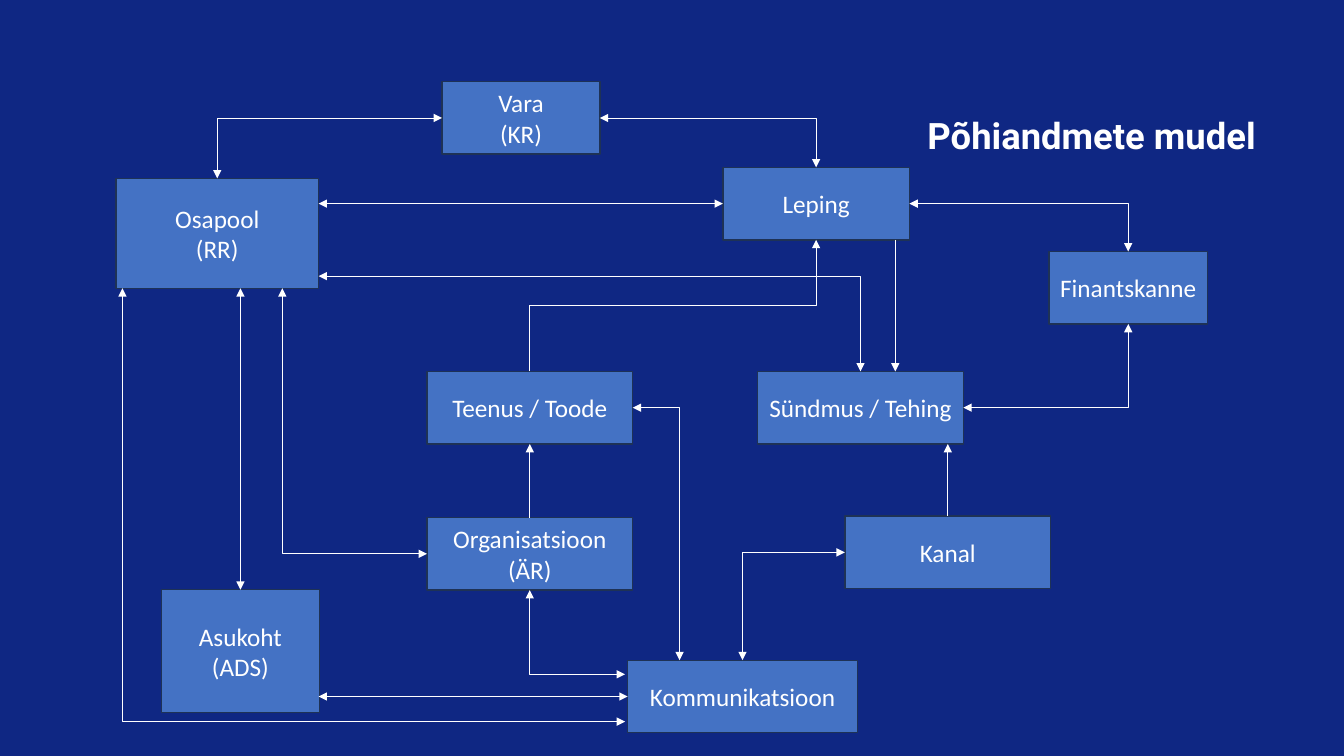
from lxml import etree
from pptx import Presentation, util as u
from pptx.dml.color import RGBColor
from pptx.enum import shapes, text
from pptx.oxml.ns import qn

COLUMNS, ROWS = 1333, 750
NAVY, BLUE, EDGE, WHITE = "0F2783", "4472C4", "1E3256", "FFFFFF"
TOP, LEFT, BOTTOM, RIGHT = range(4)

ENTITIES = {
    "Osapool": (115, 177, 201, 109, "(RR)"),
    "Vara": (438.5, 81, 156.5, 72, "(KR)"),
    "Leping": (717, 166, 185, 72, None),
    "Teenus / Toode": (423.5, 368.5, 204, 72, None),
    "Sündmus / Tehing": (751.5, 368.5, 204, 72, None),
    "Finantskanne": (1040.5, 249.5, 157, 72, None),
    "Organisatsioon": (423.5, 513.5, 204, 72, "(ÄR)"),
    "Asukoht": (160, 585, 157, 122, "(ADS)"),
    "Kommunikatsioon": (622.5, 655, 228, 72, None),
    "Kanal": (838, 512, 204, 72, None),
}

STRAIGHT_LINKS = [
    ((316, 202), ("Leping", LEFT), True),
    (("Asukoht", TOP), (238.5, 286), True),
    (("Kommunikatsioon", LEFT), (316, 691), True),
    (("Kanal", TOP), (940, 440.5), False),
    (("Organisatsioon", TOP), ("Teenus / Toode", BOTTOM), False),
    ((888, 238), (888, 368.5), False),
]

CORNER_LINKS = [
    (("Vara", LEFT), ("Osapool", TOP)),
    (("Vara", RIGHT), ("Leping", TOP)),
    ((316, 274), ("Sündmus / Tehing", TOP)),
    (("Leping", RIGHT), ("Finantskanne", TOP)),
    (("Sündmus / Tehing", RIGHT), ("Finantskanne", BOTTOM)),
    (("Kanal", LEFT), ("Kommunikatsioon", TOP)),
    (("Organisatsioon", LEFT), (280, 286)),
    (("Teenus / Toode", RIGHT), (674, 655)),
    ((620, 669), ("Organisatsioon", BOTTOM)),
    ((620, 716), (121.5, 286)),
]


def color(value):
    return RGBColor.from_string(value)


def place(area, column, row):
    left, top, width, height = area
    return round(left + width * column / COLUMNS), round(top + height * row / ROWS)


def add_title(page, area):
    title = page.shapes.title
    title.left, title.top = place(area, 318, 95)
    title.width, title.height = u.Inches(9.38), u.Inches(0.73)
    frame = title.text_frame
    frame.text = "Põhiandmete mudel"
    frame.word_wrap = True
    frame.auto_size = text.MSO_AUTO_SIZE.NONE
    frame.vertical_anchor = text.MSO_ANCHOR.MIDDLE
    para = frame.paragraphs[0]
    para.alignment = text.PP_ALIGN.RIGHT
    para.line_spacing = 1.1
    para.font.name, para.font.size, para.font.bold = "Roboto", u.Pt(26), True
    para.font.color.rgb = color(WHITE)


def add_entity(page, area, name, column, row, columns, rows, register):
    left, top = place(area, column, row)
    right, bottom = place(area, column + columns, row + rows)
    box = page.shapes.add_shape(
        shapes.MSO_SHAPE.RECTANGLE, left, top, right - left, bottom - top)
    box.shadow.inherit = False
    box.fill.solid()
    box.fill.fore_color.rgb = color(BLUE)
    box.line.color.rgb = color(EDGE)
    box.line.width = u.Pt(1)
    frame = box.text_frame
    frame.text = f"{name}\n{register}" if register else name
    frame.word_wrap = True
    frame.vertical_anchor = text.MSO_ANCHOR.MIDDLE
    for para in frame.paragraphs:
        para.alignment = text.PP_ALIGN.CENTER
        para.font.name, para.font.size = "Calibri", u.Pt(18)
        para.font.color.rgb = color(WHITE)
    return box


def locate(area, boxes, end):
    if end[0] not in boxes:
        return place(area, *end)
    box, side = boxes[end[0]], end[1]
    across, down = {TOP: (1, 0), LEFT: (0, 1), BOTTOM: (1, 2), RIGHT: (2, 1)}[side]
    return box.left + box.width * across // 2, box.top + box.height * down // 2


def add_link(page, area, boxes, start, finish, kind, both):
    link = page.shapes.add_connector(
        kind, *locate(area, boxes, start), *locate(area, boxes, finish))
    link.line.color.rgb = color(WHITE)
    link.line.width = u.Pt(0.5)
    outline = link._element.spPr.find(qn("a:ln"))
    for tag in ("a:headEnd", "a:tailEnd") if both else ("a:tailEnd",):
        etree.SubElement(outline, qn(tag)).set("type", "triangle")
    etree.SubElement(link._element.spPr, qn("a:effectLst"))
    return link


def add_straight_link(page, area, boxes, start, finish, both):
    link = add_link(page, area, boxes, start, finish,
                    shapes.MSO_CONNECTOR.STRAIGHT, both)
    for end, join in ((start, link.begin_connect), (finish, link.end_connect)):
        if end[0] in boxes:
            join(boxes[end[0]], end[1])


def add_corner_link(page, area, boxes, start, finish):
    link = add_link(page, area, boxes, start, finish,
                    shapes.MSO_CONNECTOR.ELBOW, True)
    link._element.spPr.find(qn("a:prstGeom")).set("prst", "bentConnector2")


def add_rising_link(page, area, boxes, start, finish):
    link = add_link(page, area, boxes, start, finish,
                    shapes.MSO_CONNECTOR.ELBOW, False)
    width, height = link.width, link.height
    link.left += (width - height) // 2
    link.top += (height - width) // 2
    link.width, link.height = height, width
    frame = link._element.spPr.find(qn("a:xfrm"))
    frame.set("rot", str(90 * 60000))
    frame.set("flipH", "1")


def add_model(page, area):
    boxes = {name: add_entity(page, area, name, *entity)
             for name, entity in ENTITIES.items()}
    for link in STRAIGHT_LINKS:
        add_straight_link(page, area, boxes, *link)
    for link in CORNER_LINKS:
        add_corner_link(page, area, boxes, *link)
    add_rising_link(page, area, boxes, ("Teenus / Toode", TOP), ("Leping", BOTTOM))


def main():
    deck = Presentation()
    deck.slide_width, deck.slide_height = u.Inches(13.33), u.Inches(7.5)
    page = deck.slides.add_slide(deck.slide_layouts.get_by_name("Title Only"))
    page.background.fill.solid()
    page.background.fill.fore_color.rgb = color(NAVY)
    area = (0, 0, deck.slide_width, deck.slide_height)
    add_title(page, area)
    add_model(page, area)
    deck.save("out.pptx")


if __name__ == "__main__":
    main()
